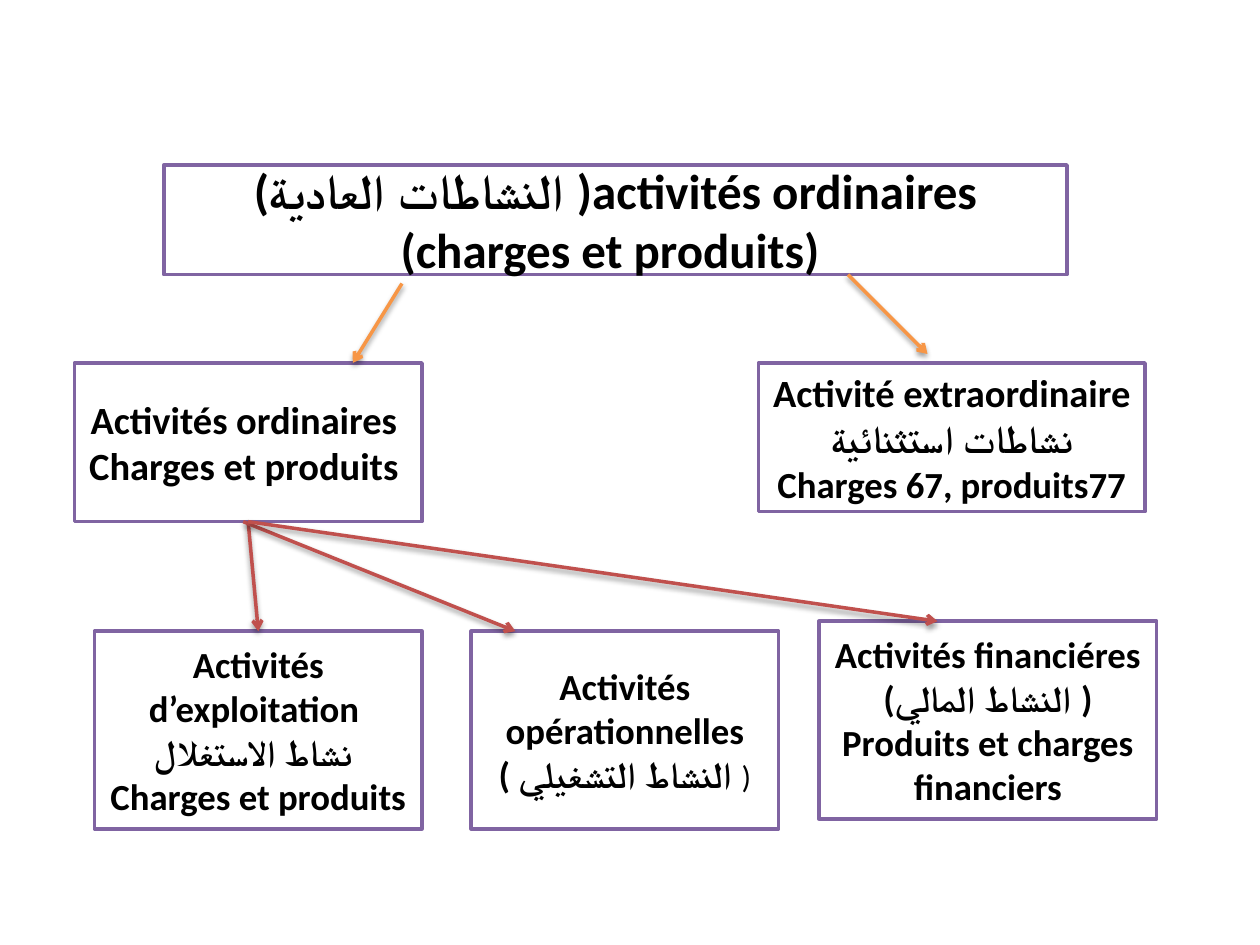
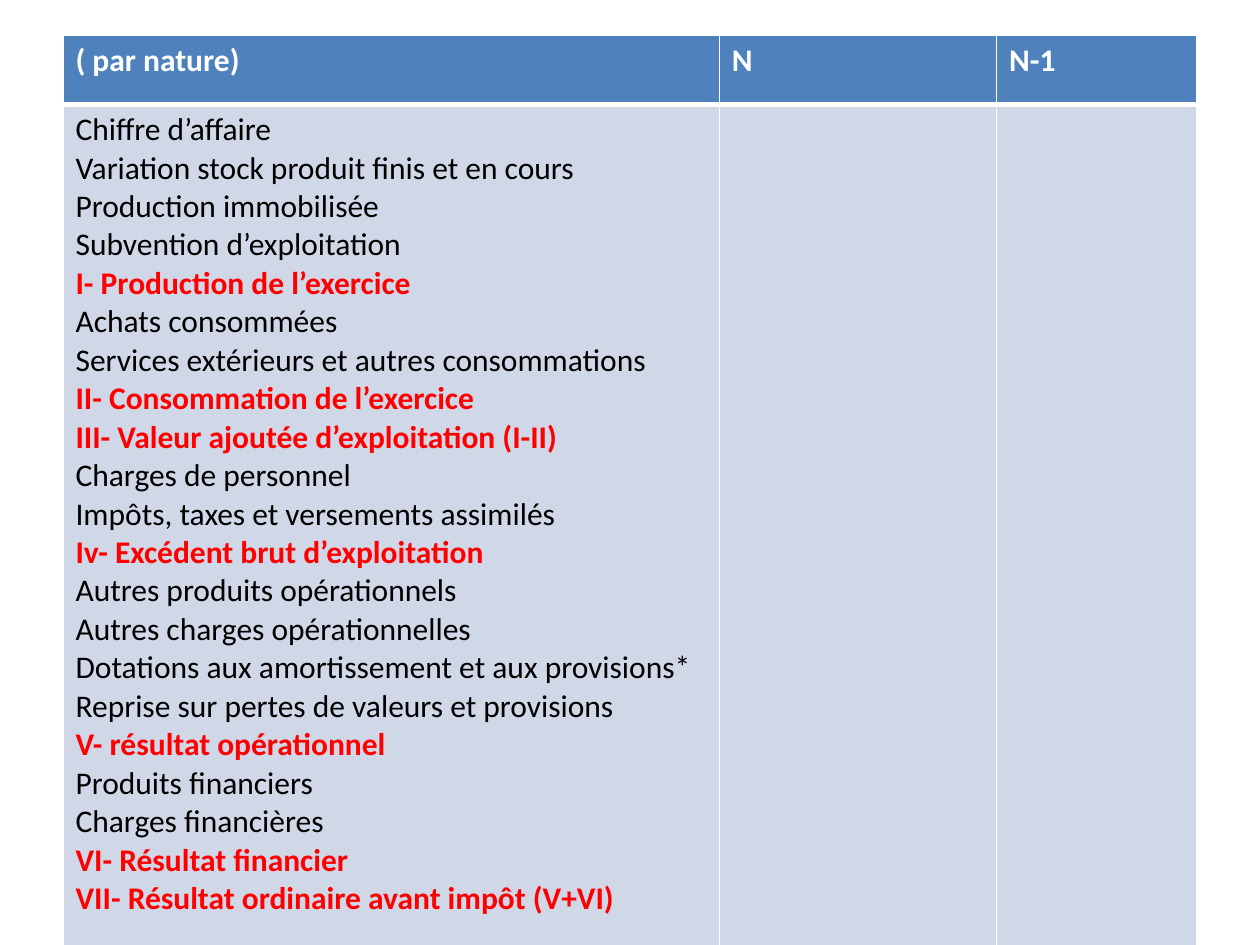
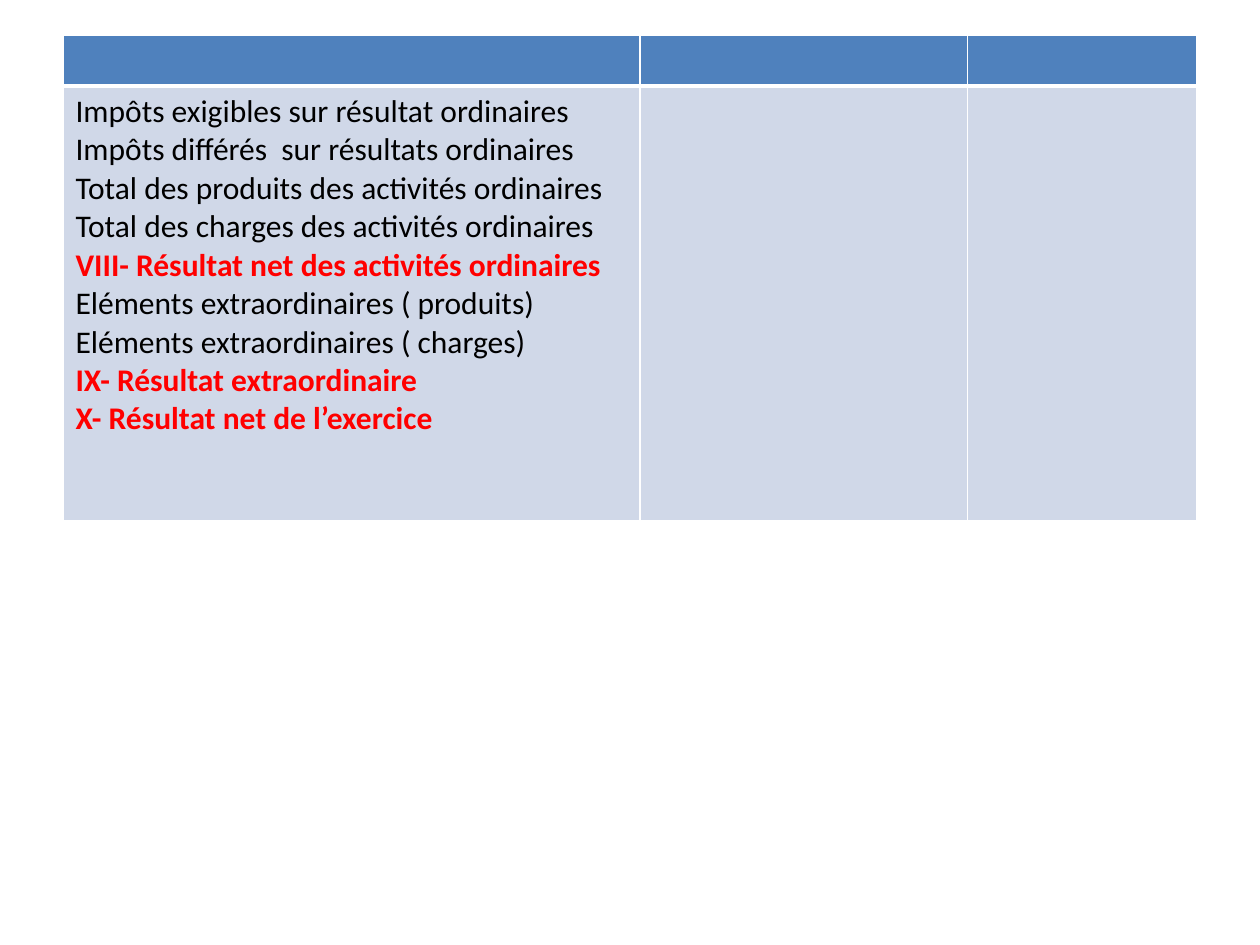
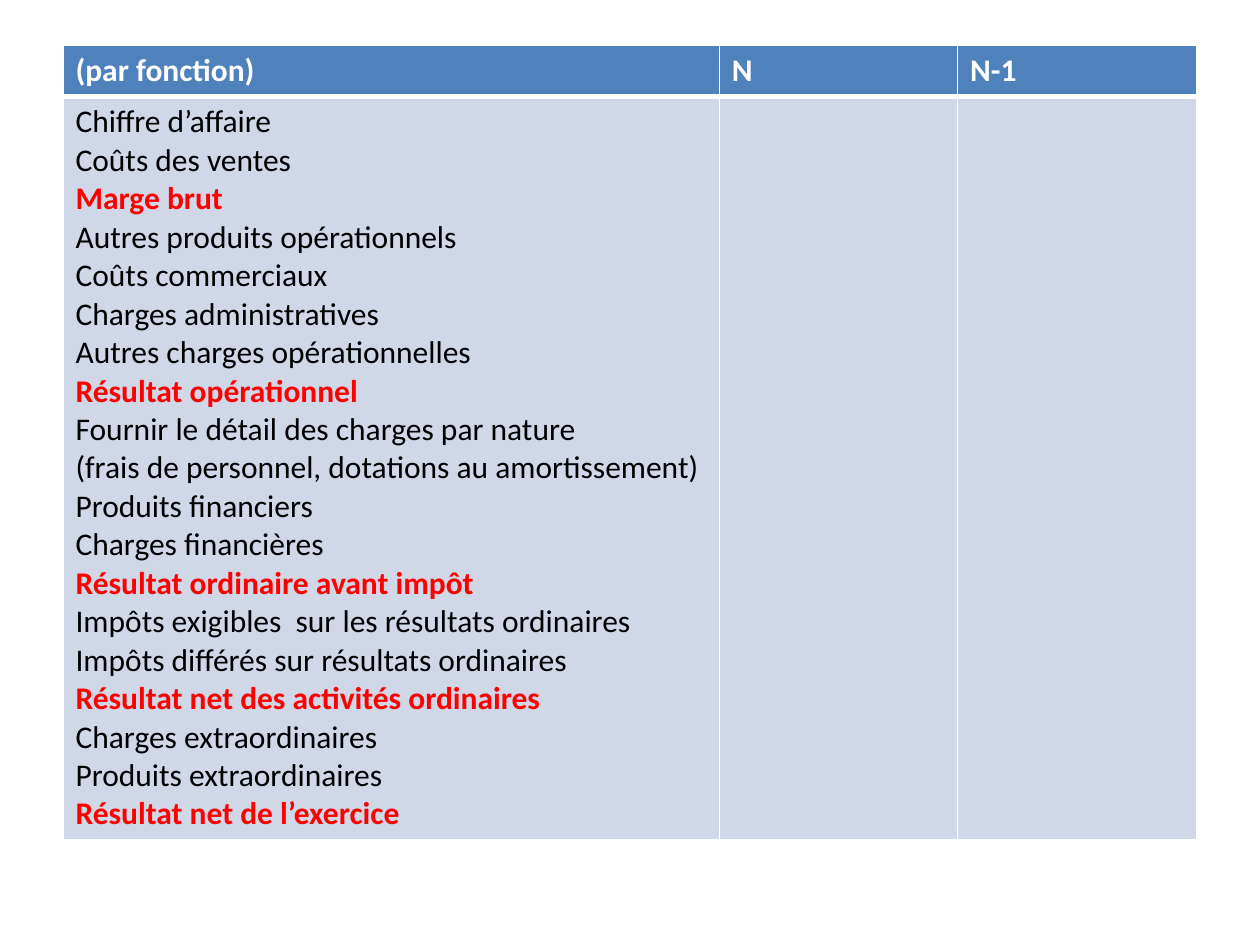
"""Build four slides on ordinary activities and income statement layouts."""
from lxml import etree
from pptx import Presentation
from pptx.dml import color as dml
from pptx.enum import shapes, text
from pptx.oxml import ns, parse_xml
from pptx.util import Pt

FONT = "Calibri"
WHITE, BLACK, RED = "FFFFFF", "000000", "FF0000"
PURPLE, ORANGE, BRICK = "8064A2", "F79646", "C0504D"
HEADER_BLUE, BODY_BLUE = "4F81BD", "D0D8E8"
TABLE_LEFT = 36

# Each box: left, top, width, height, then paragraphs of (text, size, bold) runs.
BOXES = [
    (93.6, 94.3, 516.2, 62.6, [
        [("(النشاطات العادية )activités ordinaires", 28, True)],
        [("(charges et produits) ", 28, True)]]),
    (42.5, 207.4, 198.7, 90.7, [
        [("Activités ordinaires ", 22, True)],
        [("Charges et produits ", 22, True)]]),
    (433.4, 207.4, 221, 85, [
        [("Activité extraordinaire نشاطات استثنائية", 22, True)],
        [("Charges 67, produits77", 21, True)]]),
    (54, 360.7, 187.2, 113, [
        [("Activités d’exploitation ", 21, True)],
        [("نشاط الاستغلال ", 21, True)],
        [("Charges et produits ", 21, True)]]),
    (269.3, 360.7, 175.7, 113, [
        [("Activités opérationnelles", 21, True)],
        [("( النشاط التشغيلي ", 21, True), (")", 18, False)]]),
    (468, 355, 193, 113, [
        [("Activités financiéres ", 21, True)],
        [("(النشاط المالي )", 21, True)],
        [("Produits et charges financiers", 21, True)]]),
]

ARROWS = [
    (ORANGE, (229.7, 162), (201.6, 207.4)),
    (ORANGE, (484.6, 157), (530, 202.3)),
    (BRICK, (141.8, 298.1), (147.6, 360.7)),
    (BRICK, (139, 298.1), (294.5, 360.7)),
    (BRICK, (141.8, 298.1), (535.7, 355)),
]

STATEMENTS = [
    {"top": 20, "columns": (375.1, 158.4, 114.5), "rows": (39.6, 482.4),
     "header": ("( par nature)", "N", "N-1"),
     "lines": [
         (BLACK, ["Chiffre d’affaire", "Variation stock produit finis et en cours",
                  "Production immobilisée", "Subvention d’exploitation"]),
         (RED, ["I- Production de l’exercice"]),
         (BLACK, ["Achats consommées", "Services extérieurs et autres consommations"]),
         (RED, ["II- Consommation de l’exercice",
                "III- Valeur ajoutée d’exploitation (I-II)"]),
         (BLACK, ["Charges de personnel", "Impôts, taxes et versements assimilés"]),
         (RED, ["Iv- Excédent brut d’exploitation"]),
         (BLACK, ["Autres produits opérationnels", "Autres charges opérationnelles",
                  "Dotations aux amortissement et aux provisions*",
                  "Reprise sur pertes de valeurs et provisions"]),
         (RED, ["V- résultat opérationnel"]),
         (BLACK, ["Produits financiers", "Charges financières"]),
         (RED, ["VI- Résultat financier", "VII- Résultat ordinaire avant impôt (V+VI)"]),
     ]},
    {"top": 20, "columns": (329.8, 187.2, 131), "rows": (28.8, 248.4),
     "header": ("", "", ""),
     "lines": [
         (BLACK, ["Impôts exigibles sur résultat ordinaires",
                  "Impôts différés  sur résultats ordinaires",
                  "Total des produits des activités ordinaires",
                  "Total des charges des activités ordinaires"]),
         (RED, ["VIII- Résultat net des activités ordinaires"]),
         (BLACK, ["Eléments extraordinaires ( produits)",
                  "Eléments extraordinaires ( charges)"]),
         (RED, ["IX- Résultat extraordinaire", "X- Résultat net de l’exercice"]),
     ]},
    {"top": 26, "columns": (375.1, 136.1, 136.8), "rows": (29.2, 418),
     "header": ("(par fonction)", "N", "N-1"),
     "lines": [
         (BLACK, ["Chiffre d’affaire", "Coûts des ventes"]),
         (RED, ["Marge brut"]),
         (BLACK, ["Autres produits opérationnels", "Coûts commerciaux",
                  "Charges administratives", "Autres charges opérationnelles"]),
         (RED, ["Résultat opérationnel"]),
         (BLACK, ["Fournir le détail des charges par nature",
                  "(frais de personnel, dotations au amortissement)",
                  "Produits financiers", "Charges financières"]),
         (RED, ["Résultat ordinaire avant impôt"]),
         (BLACK, ["Impôts exigibles  sur les résultats ordinaires",
                  "Impôts différés sur résultats ordinaires"]),
         (RED, ["Résultat net des activités ordinaires"]),
         (BLACK, ["Charges extraordinaires", "Produits extraordinaires"]),
         (RED, ["Résultat net de l’exercice"]),
     ]},
]


def paint(target, value):
    target.solid()
    target.fore_color.rgb = dml.RGBColor.from_string(value)


def write(frame, paragraphs, align=None):
    """Fill a frame with paragraphs of (text, size, bold, colour) runs."""
    for index, spans in enumerate(paragraphs):
        para = frame.add_paragraph() if index else frame.paragraphs[0]
        para.alignment = align
        for words, size, bold, value in spans:
            span = para.add_run()
            span.text = words
            span.font.name, span.font.size, span.font.bold = FONT, Pt(size), bold
            span.font.color.rgb = dml.RGBColor.from_string(value)


def add_box(page, left, top, width, height, paragraphs):
    box = page.shapes.add_shape(shapes.MSO_SHAPE.RECTANGLE,
                                Pt(left), Pt(top), Pt(width), Pt(height))
    box.shadow.inherit = False
    paint(box.fill, WHITE)
    paint(box.line.fill, PURPLE)
    box.line.width = Pt(2)
    box.text_frame.word_wrap = True
    box.text_frame.vertical_anchor = text.MSO_ANCHOR.MIDDLE
    write(box.text_frame, [[(*run, BLACK) for run in spans] for spans in paragraphs],
          text.PP_ALIGN.CENTER)


def add_arrow(page, value, start, end):
    arrow = page.shapes.add_connector(shapes.MSO_CONNECTOR.STRAIGHT,
                                      *map(Pt, (*start, *end)))
    paint(arrow.line.fill, value)
    arrow.line.width = Pt(2)
    etree.SubElement(arrow.line._get_or_add_ln(), ns.qn("a:tailEnd"), type="arrow")
    arrow._element.spPr.append(parse_xml(
        f'<a:effectLst {ns.nsdecls("a")}><a:outerShdw blurRad="{Pt(3.1)}" '
        f'dist="{Pt(1.6)}" dir="5400000" rotWithShape="0"><a:srgbClr val="{BLACK}">'
        '<a:alpha val="38000"/></a:srgbClr></a:outerShdw></a:effectLst>'))


def style_cell(cell, value, borders):
    """Set the fill and the white borders, given as side to width."""
    paint(cell.fill, value)
    for index, (side, width) in enumerate(borders.items()):
        cell._tc.get_or_add_tcPr().insert(index, parse_xml(
            f'<a:ln{side} {ns.nsdecls("a")} w="{Pt(width)}"><a:solidFill>'
            f'<a:srgbClr val="{WHITE}"/></a:solidFill></a:ln{side}>'))


def add_statement(page, statement):
    columns, rows = statement["columns"], statement["rows"]
    table = page.shapes.add_table(
        len(rows), len(columns), Pt(TABLE_LEFT), Pt(statement["top"]),
        Pt(sum(columns)), Pt(sum(rows))).table
    for row, height in zip(table.rows, rows):
        row.height = Pt(height)
    for index, (width, label) in enumerate(zip(columns, statement["header"])):
        table.columns[index].width = Pt(width)
        head = table.cell(0, index)
        style_cell(head, HEADER_BLUE, {"L": 1, "R": 1, "T": 1, "B": 3})
        style_cell(table.cell(1, index), BODY_BLUE, {"L": 1, "R": 1, "T": 3, "B": 1})
        if label:
            write(head.text_frame, [[(label, 18, True, WHITE)]])
    write(table.cell(1, 0).text_frame,
          [[(line, 18, value == RED, value)]
           for value, lines in statement["lines"] for line in lines])


def main():
    deck = Presentation()
    deck.slide_width, deck.slide_height = Pt(720), Pt(540)
    blank = deck.slide_layouts[6]
    page = deck.slides.add_slide(blank)
    for box in BOXES:
        add_box(page, *box)
    for arrow in ARROWS:
        add_arrow(page, *arrow)
    for statement in STATEMENTS:
        add_statement(deck.slides.add_slide(blank), statement)
    deck.save("out.pptx")


if __name__ == "__main__":
    main()
